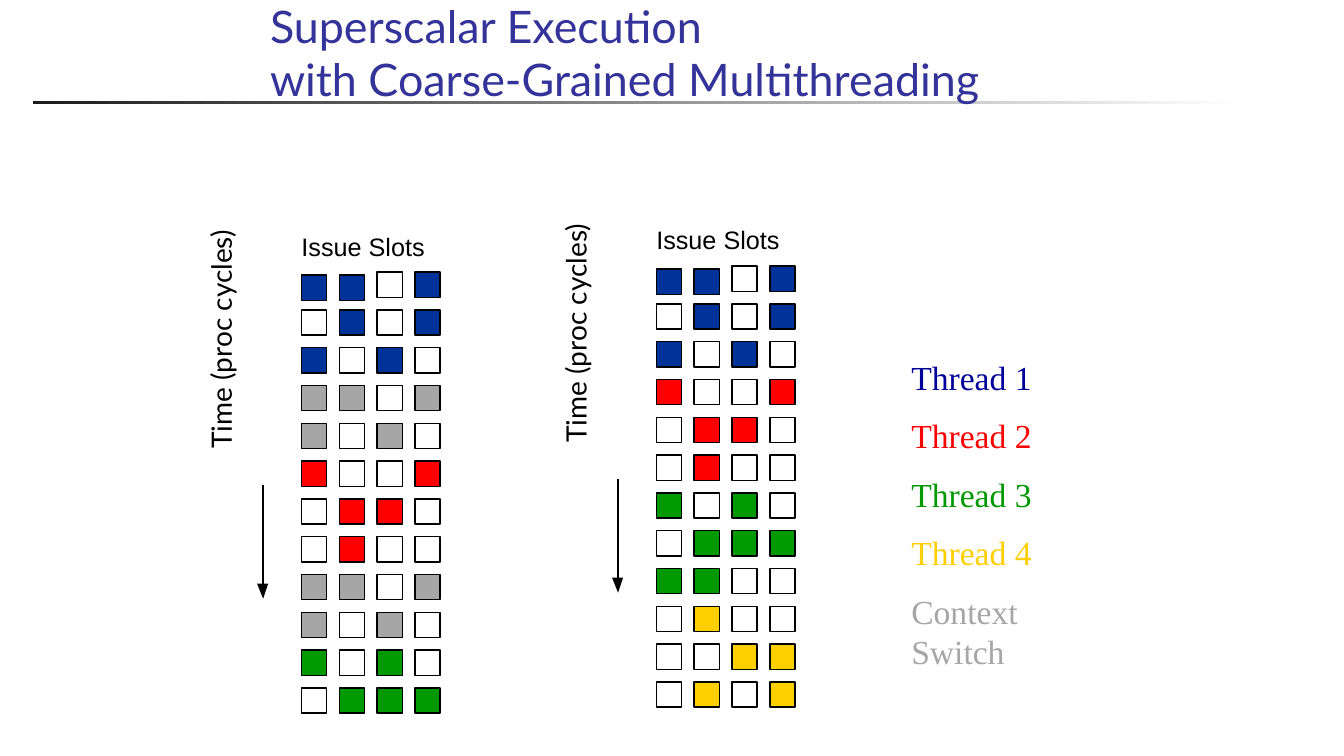
import pptx
import pptx.util
import pptx.dml.color
import pptx.enum.shapes
import pptx.enum.text
import pptx.oxml.ns
import lxml.etree

Inches = pptx.util.Inches
Pt = pptx.util.Pt
KIND = pptx.enum.shapes.MSO_SHAPE
LINE = pptx.enum.shapes.MSO_CONNECTOR
ANCHOR = pptx.enum.text.MSO_ANCHOR

COLORS = {
    "title": "333399", "ink": "000000", "bar": "1C1C1C", "paper": "FFFFFF",
    "navy": "000099", "blue": "003399", "red": "FF0000",
    "green": "009900", "gold": "FFCF01", "gray": "A6A6A6",
}
# Slot marks: thread number, c for a context switch, dot for an empty slot
MARKS = {"1": "blue", "2": "red", "3": "green", "4": "gold", "c": "gray"}
STEP = 3 / 8
SIDE = 0.25
PANELS = [
    (2.99, 2.7, "11.1 .1.1 1.1. cc.c c.c. 2..2 .22. .2.. cc.c c.c. 3.3. .333"),
    (6.51, 2.64, "11.1 .1.1 1.1. 2..2 .22. .2.. 3.3. .333 33.. .4.. ..44 .4.4"),
]
LEGEND = [("Thread 1", "navy"), ("Thread 2", "red"), ("Thread 3", "green"),
          ("Thread 4", "gold"), ("Context Switch", "gray")]


class Deck:
    def __init__(self):
        self.prs = pptx.Presentation()
        self.prs.slide_width = Inches(13.33)
        self.prs.slide_height = Inches(7.5)
        self.slide = self.prs.slides.add_slide(self.prs.slide_layouts[6])
        self.shapes = self.slide.shapes

    def color(self, name):
        return pptx.dml.color.RGBColor.from_string(COLORS[name])

    def rect(self, x, y, w, h):
        box = self.shapes.add_shape(
            KIND.RECTANGLE, Inches(x), Inches(y), Inches(w), Inches(h))
        box.shadow.inherit = False
        return box

    def bar(self, x, y, w, h):
        box = self.rect(x, y, w, h)
        box.line.fill.background()
        box.fill.gradient()
        box.fill.gradient_angle = 0
        for stop, name, spot in zip(box.fill.gradient_stops, ("bar", "paper"), (0, 1)):
            stop.color.rgb = self.color(name)
            stop.position = spot

    def slot(self, x, y, name):
        box = self.rect(x, y, SIDE, SIDE)
        box.line.color.rgb = self.color("ink")
        box.line.width = Pt(1)
        if name:
            box.fill.solid()
            box.fill.fore_color.rgb = self.color(name)
        else:
            box.fill.background()

    def text(self, x, y, w, h, items, font, size, gap=0, wrap=True):
        box = self.shapes.add_textbox(Inches(x), Inches(y), Inches(w), Inches(h))
        frame = box.text_frame
        frame.word_wrap = wrap
        for i, (words, name) in enumerate(items):
            para = frame.add_paragraph() if i else frame.paragraphs[0]
            para.text = words
            if i:
                para.space_before = Pt(gap)
            for run in para.runs:
                run.font.name = font
                run.font.size = Pt(size)
                run.font.color.rgb = self.color(name)
        return box

    def arrow(self, x, top, end):
        group = self.shapes.add_group_shape().shapes
        neck = end - 0.15
        pen = group.build_freeform(Inches(x), Inches(end))
        pen.add_line_segments(
            [(Inches(x - 0.06), Inches(neck)), (Inches(x + 0.05), Inches(neck))])
        head = pen.convert_to_shape()
        head.shadow.inherit = False
        head.fill.solid()
        head.fill.fore_color.rgb = self.color("ink")
        head.line.fill.background()
        stem = group.add_connector(
            LINE.STRAIGHT, Inches(x), Inches(top), Inches(x), Inches(end - 0.04))
        stem.line.color.rgb = self.color("ink")
        stem.line.width = Pt(1)
        lxml.etree.SubElement(
            stem.element.spPr, pptx.oxml.ns.qn("a:effectLst"))

    def panel(self, x, y, rows):
        # Time axis
        axis = self.text(x - 2.42, y, 3.29, 0.41,
                         [("Time (proc cycles)", "ink")], "Lato", 20)
        axis.rotation = 270
        axis.text_frame.paragraphs[0].line_spacing = 0.9
        self.arrow(x - 0.38, y + 2.11, y + 3.24)
        # Heading
        head = self.text(x, y - 0.41, 1.23, 0.3,
                         [("Issue Slots", "ink")], "Arial", 18, wrap=False)
        frame = head.text_frame
        frame.margin_left = frame.margin_right = 0
        frame.margin_top = frame.margin_bottom = 0
        # Slot grid; the first two slots sit slightly lower
        for r, row in enumerate(rows.split()):
            for c, mark in enumerate(row):
                drop = 0.03 if r == 0 and c < 2 else 0
                self.slot(x + c * STEP, y + r * STEP + drop, MARKS.get(mark))


def main():
    deck = Deck()
    # Title and rule
    deck.bar(0.33, 1, 12, 0.03)
    title = deck.text(
        2.58, 0.58, 8.86, 0.52,
        [("Superscalar Execution \nwith Coarse-Grained Multithreading", "title")],
        "Lato", 32)
    title.text_frame.vertical_anchor = ANCHOR.BOTTOM
    # Issue slot panels
    for x, y, rows in PANELS:
        deck.panel(x, y, rows)
    # Legend
    deck.text(8.94, 3.49, 2.17, 3.33, LEGEND, "Times New Roman", 24, gap=13)
    deck.prs.save("out.pptx")


if __name__ == "__main__":
    main()
